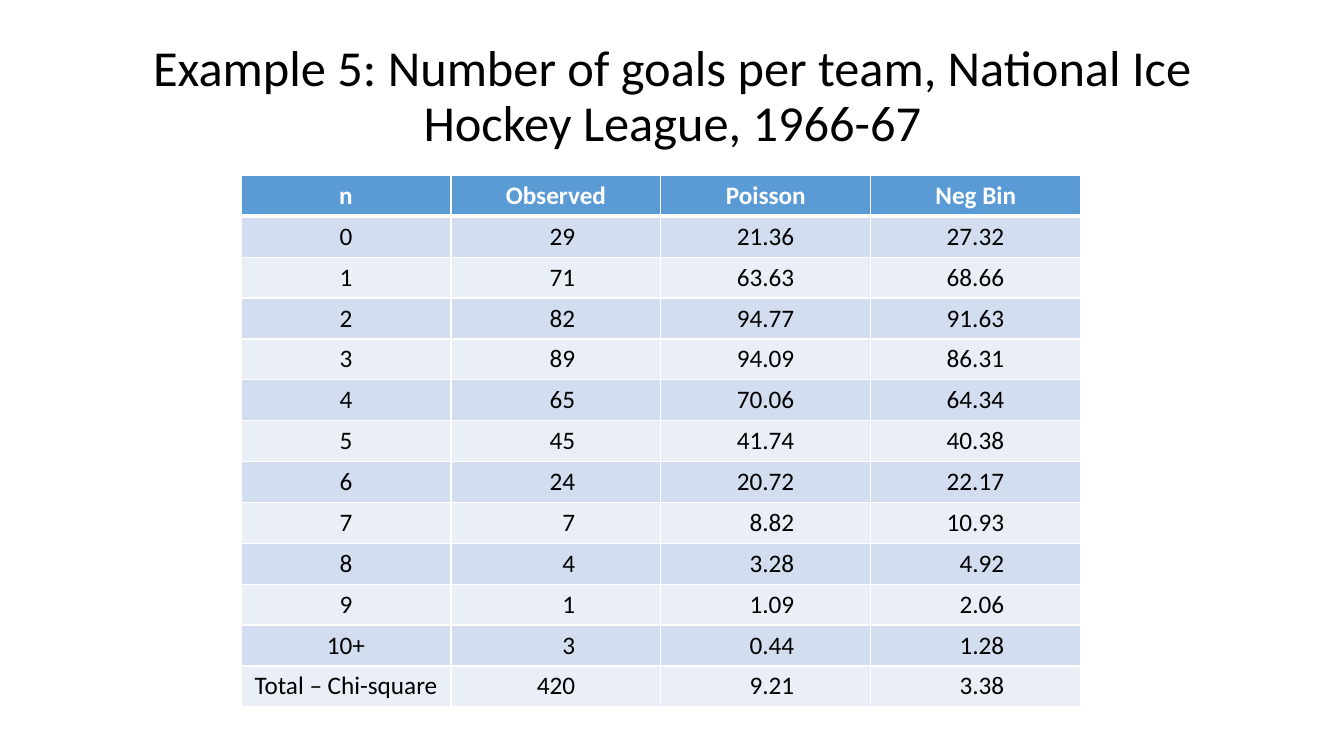
from lxml import etree
from pptx import Presentation
from pptx import util as u
from pptx.dml.color import RGBColor
from pptx.enum import text
from pptx.oxml.ns import qn

FONT = "Calibri"
BLACK, WHITE = "000000", "FFFFFF"
HEADER_FILL = "5B9BD5"
BAND_FILLS = ("D2DEEF", "EAEFF7")
TITLE = "Example 5: Number of goals per team, National Ice Hockey League, 1966-67"
HEADERS = ("n", "Observed", "Poisson", "Neg Bin")
GOALS = (
    ("0", "29", "21.36", "27.32"),
    ("1", "71", "63.63", "68.66"),
    ("2", "82", "94.77", "91.63"),
    ("3", "89", "94.09", "86.31"),
    ("4", "65", "70.06", "64.34"),
    ("5", "45", "41.74", "40.38"),
    ("6", "24", "20.72", "22.17"),
    ("7", "7", "8.82", "10.93"),
    ("8", "4", "3.28", "4.92"),
    ("9", "1", "1.09", "2.06"),
    ("10+", "3", "0.44", "1.28"),
    ("Total – Chi-square", "420", "9.21", "3.38"),
)
# Right margins that line up the digits of each numeric column
NUMBER_MARGINS = (None, 0.85, 0.76, 0.76)


def colour(value):
    return RGBColor.from_string(value)


def write(frame, words, align, ink, **formats):
    para = frame.paragraphs[0]
    para.alignment = align
    span = para.add_run()
    span.text = words
    span.font.color.rgb = colour(ink)
    for name, value in {"name": FONT, **formats}.items():
        setattr(span.font, name, value)
    return para


def add_border(cell, side, points):
    properties = cell._tc.get_or_add_tcPr()
    line = etree.SubElement(properties, qn(f"a:ln{side}"), w=str(u.Pt(points)))
    fill = etree.SubElement(line, qn("a:solidFill"))
    etree.SubElement(fill, qn("a:srgbClr"), val=WHITE)


def format_cell(cell, row, column, words):
    is_header = row == 0
    margin = NUMBER_MARGINS[column]
    align = text.PP_ALIGN.CENTER
    if margin and not is_header:
        align = text.PP_ALIGN.RIGHT
        cell.margin_right = u.Inches(margin)
    write(cell.text_frame, words, align, WHITE if is_header else BLACK,
          size=u.Pt(18), bold=is_header)

    # The rule under the header is thicker than the other borders
    widths = {"L": 1, "R": 1, "T": 3 if row == 1 else 1, "B": 3 if is_header else 1}
    for side, points in widths.items():
        add_border(cell, side, points)
    cell.fill.solid()
    cell.fill.fore_color.rgb = colour(HEADER_FILL if is_header else BAND_FILLS[(row - 1) % 2])


def add_title(page):
    box = page.shapes.title
    place = {"left": 0.92, "top": 0.4, "width": 11.5, "height": 1.14}
    for name, value in place.items():
        setattr(box, name, u.Inches(value))
    frame = box.text_frame
    frame.auto_size = text.MSO_AUTO_SIZE.NONE
    frame.vertical_anchor = text.MSO_ANCHOR.MIDDLE
    para = write(frame, TITLE, text.PP_ALIGN.CENTER, BLACK, size=u.Pt(36))
    para.line_spacing = 0.9


def add_goals_table(page):
    rows = (HEADERS, *GOALS)
    table = page.shapes.add_table(
        len(rows), len(HEADERS),
        u.Inches(2.39), u.Inches(1.74), u.Inches(8.33), u.Inches(5.27)).table
    for row, values in enumerate(rows):
        for column, words in enumerate(values):
            format_cell(table.cell(row, column), row, column, words)


def main():
    deck = Presentation()
    deck.slide_width, deck.slide_height = u.Inches(13.33), u.Inches(7.5)
    page = deck.slides.add_slide(deck.slide_layouts[5])
    add_title(page)
    add_goals_table(page)
    deck.save("out.pptx")


if __name__ == "__main__":
    main()
